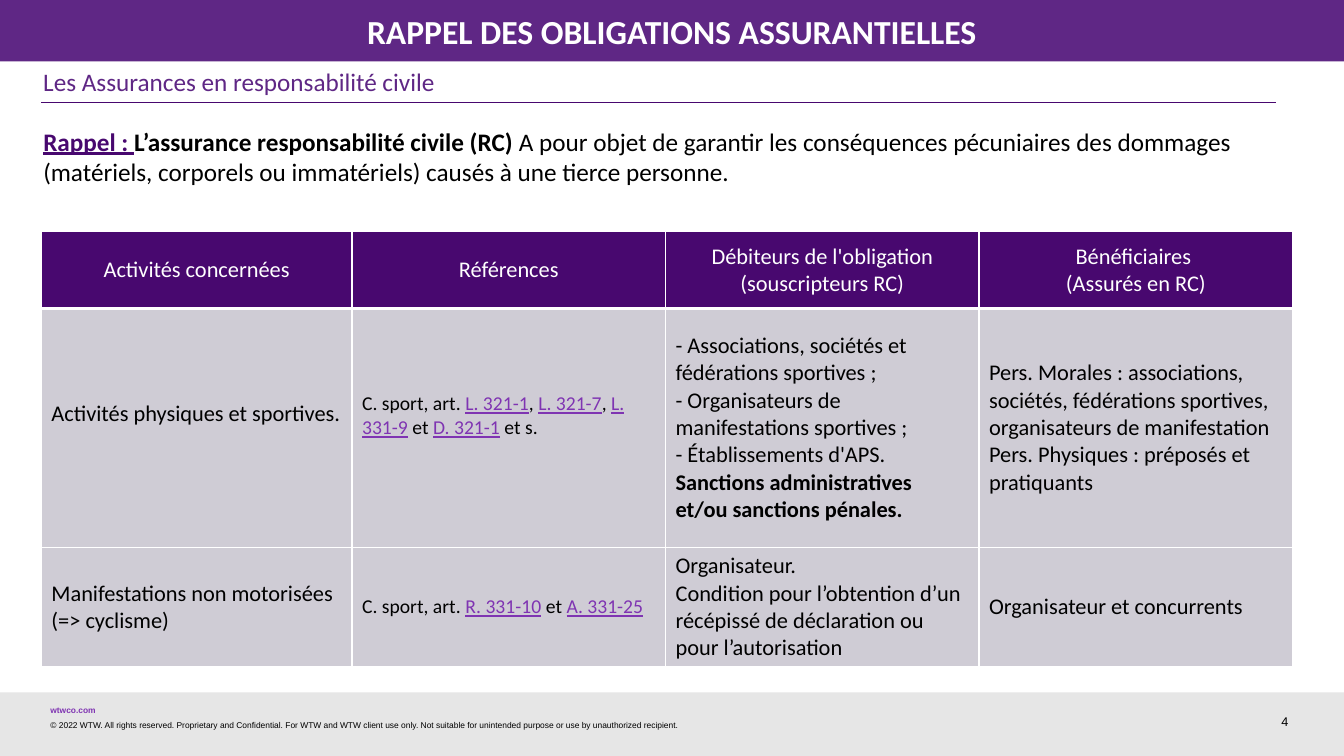
"""Build the slide on civil liability insurance obligations."""
from dataclasses import dataclass

from lxml import etree
from pptx import Presentation
from pptx.dml.color import RGBColor
from pptx.enum.shapes import MSO_CONNECTOR, MSO_SHAPE
from pptx.enum.text import MSO_ANCHOR, PP_ALIGN
from pptx.oxml.ns import qn
from pptx.util import Emu, Inches, Pt

RECT = MSO_SHAPE.RECTANGLE
STRAIGHT = MSO_CONNECTOR.STRAIGHT
TOP, MIDDLE, BOTTOM = MSO_ANCHOR.TOP, MSO_ANCHOR.MIDDLE, MSO_ANCHOR.BOTTOM
LEFT, CENTER, RIGHT = PP_ALIGN.LEFT, PP_ALIGN.CENTER, PP_ALIGN.RIGHT

WIDTH, HEIGHT = Inches(13.33), Inches(7.5)
BLACK, WHITE, GREY = "000000", "FFFFFF", "E6E6E6"
PURPLE, DARK, LINK, CELL = "5F2785", "48086F", "7F34B2", "CFCCD5"
COLUMNS = (23.11, 23.33, 23.33, 23.33)
ROWS = (10.13, 31.6, 15.47)


@dataclass(frozen=True)
class Run:
    """A piece of text with one format."""
    text: str
    size: float = 16
    color: str = BLACK
    bold: bool = False
    underline: bool = False
    font: str = "Calibri"


@dataclass(frozen=True)
class Box:
    """A text box placed in percent of the slide's size."""
    left: float
    top: float
    width: float
    height: float
    runs: tuple[Run, ...]
    align: PP_ALIGN = LEFT
    anchor: MSO_ANCHOR = TOP
    inset: bool = True


@dataclass(frozen=True)
class Cell:
    """A table cell, with room below its text in inches."""
    paragraphs: tuple[tuple[Run, ...], ...]
    below: float = 0.05


def x(share: float) -> Emu:
    """Turn a percentage of the slide's width into a length."""
    return Emu(round(WIDTH * share / 100))


def y(share: float) -> Emu:
    """Turn a percentage of the slide's height into a length."""
    return Emu(round(HEIGHT * share / 100))


def rgb(color: str) -> RGBColor:
    """Turn a hex string into a colour."""
    return RGBColor.from_string(color)


def plain(*lines: str, color: str = BLACK, below: float = 0.05) -> Cell:
    """Make a cell with one run per paragraph."""
    return Cell(tuple((Run(line, color=color),) for line in lines), below)


def articles(*parts: str, below: float = 0.05) -> Cell:
    """Make a reference cell where every second part is a link."""
    runs = tuple(Run(part, 14, LINK if i % 2 else BLACK, underline=bool(i % 2))
                 for i, part in enumerate(parts))
    return Cell((runs,), below)


def write(p, runs: tuple[Run, ...], align: PP_ALIGN) -> None:
    """Fill a paragraph with formatted runs."""
    p.alignment = align
    for run in runs:
        r = p.add_run()
        r.text = run.text
        r.font.name, r.font.size = run.font, Pt(run.size)
        r.font.bold, r.font.underline = run.bold, run.underline
        r.font.color.rgb = rgb(run.color)


def add_band(s, top: float, height: float, color: str):
    """Draw a full-width band."""
    sp = s.shapes.add_shape(RECT, 0, y(top), WIDTH, y(height))
    sp.shadow.inherit = False
    sp.fill.solid()
    sp.fill.fore_color.rgb = rgb(color)
    sp.line.fill.background()
    return sp


def add_box(s, box: Box) -> None:
    """Draw a text box."""
    sp = s.shapes.add_textbox(x(box.left), y(box.top), x(box.width), y(box.height))
    tf = sp.text_frame
    tf.word_wrap = True
    tf.vertical_anchor = box.anchor
    if not box.inset:
        tf.margin_left = tf.margin_right = tf.margin_top = tf.margin_bottom = 0
    write(tf.paragraphs[0], box.runs, box.align)


def add_rule(s, left: float, right: float, top: float) -> None:
    """Draw the line below the subtitle."""
    line = s.shapes.add_connector(STRAIGHT, x(left), y(top), x(right), y(top))
    line.line.color.rgb = rgb(DARK)
    line.line.width = Pt(1)
    etree.SubElement(line._element.spPr, qn("a:effectLst"))


def add_borders(cell, top: float, bottom: float) -> None:
    """Give a cell white borders, with widths in points."""
    tcPr = cell._tc.get_or_add_tcPr()
    for side, width in (("L", 1), ("R", 1), ("T", top), ("B", bottom)):
        ln = etree.SubElement(tcPr, qn(f"a:ln{side}"), w=str(Pt(width)))
        fill = etree.SubElement(ln, qn("a:solidFill"))
        etree.SubElement(fill, qn("a:srgbClr"), val=WHITE)


def add_obligations(s, rows: tuple[tuple[Cell, ...], ...]) -> None:
    """Draw the table of obligations."""
    table = s.shapes.add_table(len(ROWS), len(COLUMNS), x(3.08), y(30.67),
                               x(sum(COLUMNS)), y(sum(ROWS))).table
    table.horz_banding = False
    for column, share in zip(table.columns, COLUMNS):
        column.width = x(share)
    for i, (share, cells) in enumerate(zip(ROWS, rows)):
        table.rows[i].height = y(share)
        for j, content in enumerate(cells):
            cell = table.cell(i, j)
            add_borders(cell, 3 if i == 1 else 1, 3 if i == 0 else 1)
            cell.fill.solid()
            cell.fill.fore_color.rgb = rgb(CELL if i else DARK)
            cell.vertical_anchor = MIDDLE
            cell.margin_bottom = Inches(content.below)
            tf = cell.text_frame
            for k, runs in enumerate(content.paragraphs):
                p = tf.add_paragraph() if k else tf.paragraphs[0]
                write(p, runs, LEFT if i else CENTER)


BOXES = (
    Box(3.75, 93.33, 3.6, 1.33, (Run("wtwco.com", 6, LINK, True, font="Arial"),), inset=False),
    Box(3.75, 95.2, 48.76, 1.33, (Run(
        "© 2022 WTW. All rights reserved. Proprietary and Confidential. For WTW and WTW client "
        "use only. Not suitable for unintended purpose or use by unauthorized recipient.",
        6, font="Arial"),), inset=False),
    Box(93.32, 93.33, 2.55, 3.07, (Run("4", 9, font="Arial"),), RIGHT, BOTTOM, False),
    Box(2.48, 8.13, 82.22, 5.33, (Run("Les Assurances en responsabilité civile", 18, PURPLE),)),
    Box(2.48, 16, 91.3, 9.47, (
        Run("Rappel : ", 18, DARK, True, True),
        Run("L’assurance responsabilité civile (RC) ", 18, bold=True),
        Run("A pour objet de garantir les conséquences pécuniaires des dommages (matériels, "
            "corporels ou immatériels) causés à une tierce personne.", 18))),
)

OBLIGATIONS = (
    (plain("Activités concernées", color=WHITE),
     plain("Références", color=WHITE),
     plain("Débiteurs de l'obligation (souscripteurs RC)", color=WHITE),
     plain("Bénéficiaires ", "(Assurés en RC)", color=WHITE)),
    (plain("Activités physiques et sportives.", below=0.32),
     articles("C. sport, art. ", "L. 321-1", ", ", "L. 321-7", ", ", "L. 331-9", " et ",
              "D. 321-1", " et s.", below=0.29),
     Cell(((Run("- Associations, sociétés et fédérations sportives ;"),),
           (Run("- Organisateurs de manifestations sportives ;"),),
           (Run("- Établissements d'APS."),),
           (Run("Sanctions administratives et/ou sanctions pénales.", bold=True),))),
     plain("Pers. Morales : associations, sociétés, fédérations sportives, "
           "organisateurs de manifestation",
           "Pers. Physiques : préposés et pratiquants")),
    (plain("Manifestations non motorisées (=> cyclisme)"),
     articles("C. sport, art. ", "R. 331-10", " et ", "A. 331-25"),
     plain("Organisateur.", "Condition pour l’obtention d’un récépissé de déclaration ou "
           "pour l’autorisation"),
     plain("Organisateur et concurrents")),
)


def main() -> None:
    """Build and save the slide."""
    prs = Presentation()
    prs.slide_width, prs.slide_height = WIDTH, HEIGHT
    s = prs.slides.add_slide(prs.slide_layouts[6])
    add_band(s, 91.6, 8.4, GREY)
    tf = add_band(s, 0, 8.13, PURPLE).text_frame
    tf.vertical_anchor = MIDDLE
    write(tf.paragraphs[0], (Run("RAPPEL DES OBLIGATIONS ASSURANTIELLES", 24, WHITE, True),), CENTER)
    add_rule(s, 3.08, 94.97, 13.6)
    add_obligations(s, OBLIGATIONS)
    for box in BOXES:
        add_box(s, box)
    prs.save("out.pptx")


if __name__ == "__main__":
    main()
